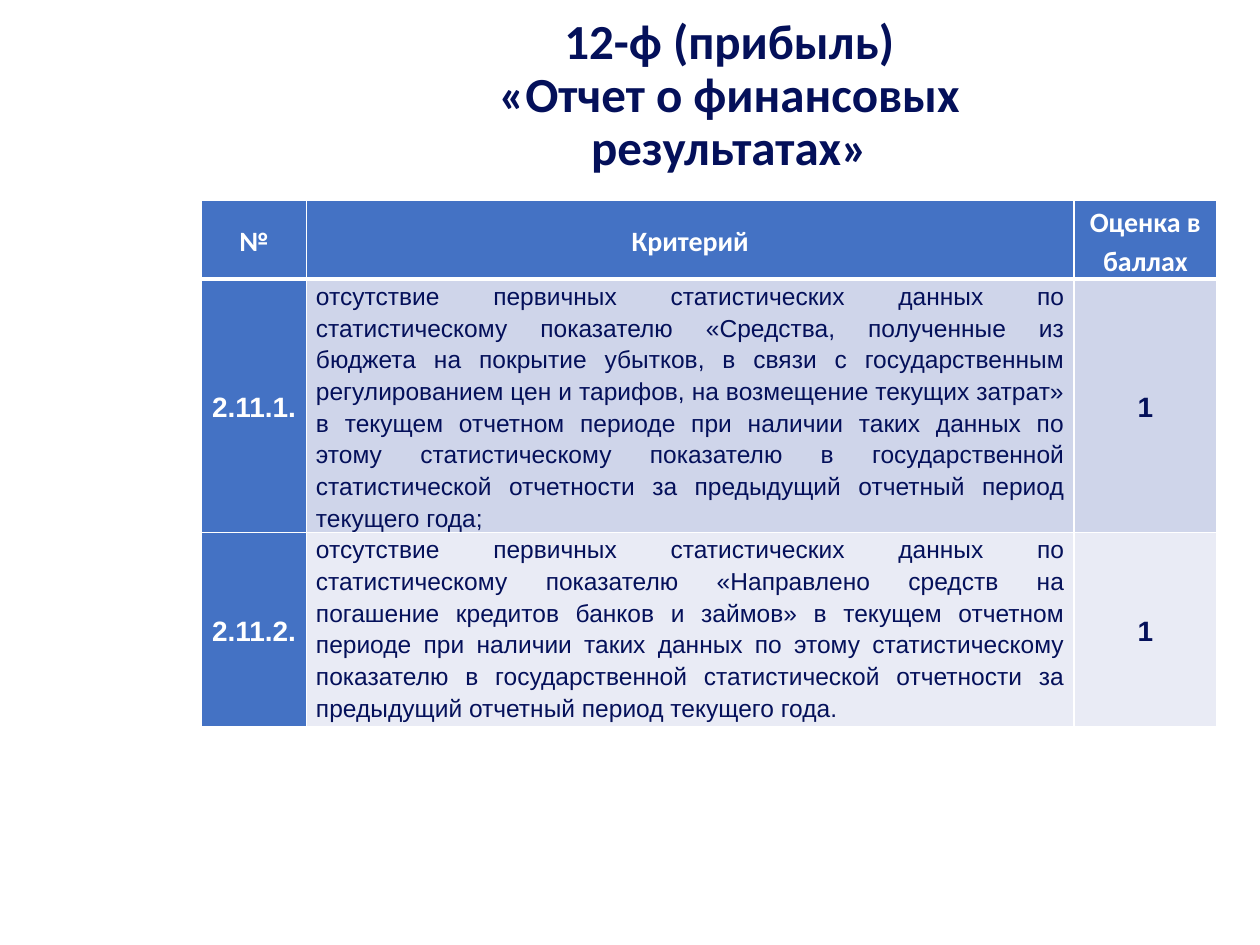
from dataclasses import dataclass

from lxml import etree
from pptx import Presentation
from pptx.dml.color import RGBColor
from pptx.enum.text import MSO_ANCHOR, PP_ALIGN
from pptx.oxml.ns import qn
from pptx.util import Cm, Pt

CENTER, JUSTIFY = PP_ALIGN.CENTER, PP_ALIGN.JUSTIFY
TOP, MIDDLE = MSO_ANCHOR.TOP, MSO_ANCHOR.MIDDLE

NAVY, WHITE, BLUE = "04105A", "FFFFFF", "4472C4"
BANDS = ("CFD5EA", "E9EBF5")
COLUMN_WIDTHS = (2.12, 15.47, 2.88)
ROW_HEIGHTS = (1.04, 5.06, 3.91)


@dataclass
class CellStyle:
    fill: str
    color: str = WHITE
    font: str = "Arial"
    size: float = 16
    bold: bool = True
    align: PP_ALIGN = CENTER
    anchor: MSO_ANCHOR = MIDDLE
    bottom_line: float = 1


HEADERS = ("№", "Критерий", "Оценка в баллах")
CRITERIA = (
    (
        "2.11.1.",
        "отсутствие первичных статистических данных по статистическому показателю "
        "«Средства, полученные из бюджета на покрытие убытков, в связи с "
        "государственным регулированием цен и тарифов, на возмещение текущих затрат» "
        "в текущем отчетном периоде при наличии таких данных по этому "
        "статистическому показателю в государственной статистической отчетности "
        "за предыдущий отчетный период текущего года;",
        "1",
    ),
    (
        "2.11.2.",
        "отсутствие первичных статистических данных по статистическому показателю "
        "«Направлено средств на погашение кредитов банков и займов» в текущем "
        "отчетном периоде при наличии таких данных по этому статистическому "
        "показателю в государственной статистической отчетности за предыдущий "
        "отчетный период текущего года.",
        "1",
    ),
)


def rgb(color: str) -> RGBColor:
    return RGBColor.from_string(color)


def format_paragraph(p, font: str, size: float, color: str, bold: bool,
                     align: PP_ALIGN, line_spacing: float) -> None:
    p.alignment = align
    p.line_spacing = line_spacing
    for r in p.runs:
        r.font.name = font
        r.font.size = Pt(size)
        r.font.bold = bold
        r.font.color.rgb = rgb(color)


def add_borders(cell, bottom_line: float) -> None:
    """Draw white cell borders; call before the cell gets its fill."""
    tc_pr = cell._tc.get_or_add_tcPr()
    for side, width in (("L", 1), ("R", 1), ("T", 1), ("B", bottom_line)):
        ln = etree.SubElement(tc_pr, qn(f"a:ln{side}"), w=str(Pt(width)))
        fill = etree.SubElement(ln, qn("a:solidFill"))
        etree.SubElement(fill, qn("a:srgbClr"), val=WHITE)


def fill_cell(cell, text: str, style: CellStyle) -> None:
    add_borders(cell, style.bottom_line)
    cell.fill.solid()
    cell.fill.fore_color.rgb = rgb(style.fill)
    cell.vertical_anchor = style.anchor
    cell.margin_left = cell.margin_right = Cm(0.19)
    cell.margin_top = cell.margin_bottom = 0
    cell.text_frame.text = text
    format_paragraph(cell.text_frame.paragraphs[0], style.font, style.size,
                     style.color, style.bold, style.align, 1.15)


def add_criteria_table(slide) -> None:
    table = slide.shapes.add_table(
        len(ROW_HEIGHTS), len(COLUMN_WIDTHS), Cm(4.06), Cm(4.04),
        Cm(sum(COLUMN_WIDTHS)), Cm(sum(ROW_HEIGHTS))).table
    for column, width in zip(table.columns, COLUMN_WIDTHS):
        column.width = Cm(width)
    for row, height in zip(table.rows, ROW_HEIGHTS):
        row.height = Cm(height)

    header = CellStyle(BLUE, font="Calibri", bottom_line=3)
    for col, text in enumerate(HEADERS):
        fill_cell(table.cell(0, col), text, header)
    for row, (texts, band) in enumerate(zip(CRITERIA, BANDS), start=1):
        styles = (
            CellStyle(BLUE),
            CellStyle(band, NAVY, size=14, bold=False, align=JUSTIFY, anchor=TOP),
            CellStyle(band, NAVY),
        )
        for col, (text, style) in enumerate(zip(texts, styles)):
            fill_cell(table.cell(row, col), text, style)


def add_title(slide) -> None:
    tf = slide.shapes.add_textbox(Cm(7.26), Cm(0.74), Cm(14.88), Cm(2.41)).text_frame
    tf.word_wrap = True
    tf.vertical_anchor = MIDDLE
    tf.text = "12-ф (прибыль)\n«Отчет о финансовых результатах»"
    for p in tf.paragraphs:
        format_paragraph(p, "Calibri", 28, NAVY, True, CENTER, 0.9)


def main() -> None:
    prs = Presentation()
    prs.slide_width, prs.slide_height = Cm(25.4), Cm(19.05)
    slide = prs.slides.add_slide(prs.slide_layouts[6])
    add_criteria_table(slide)
    add_title(slide)
    prs.save("out.pptx")


if __name__ == "__main__":
    main()
